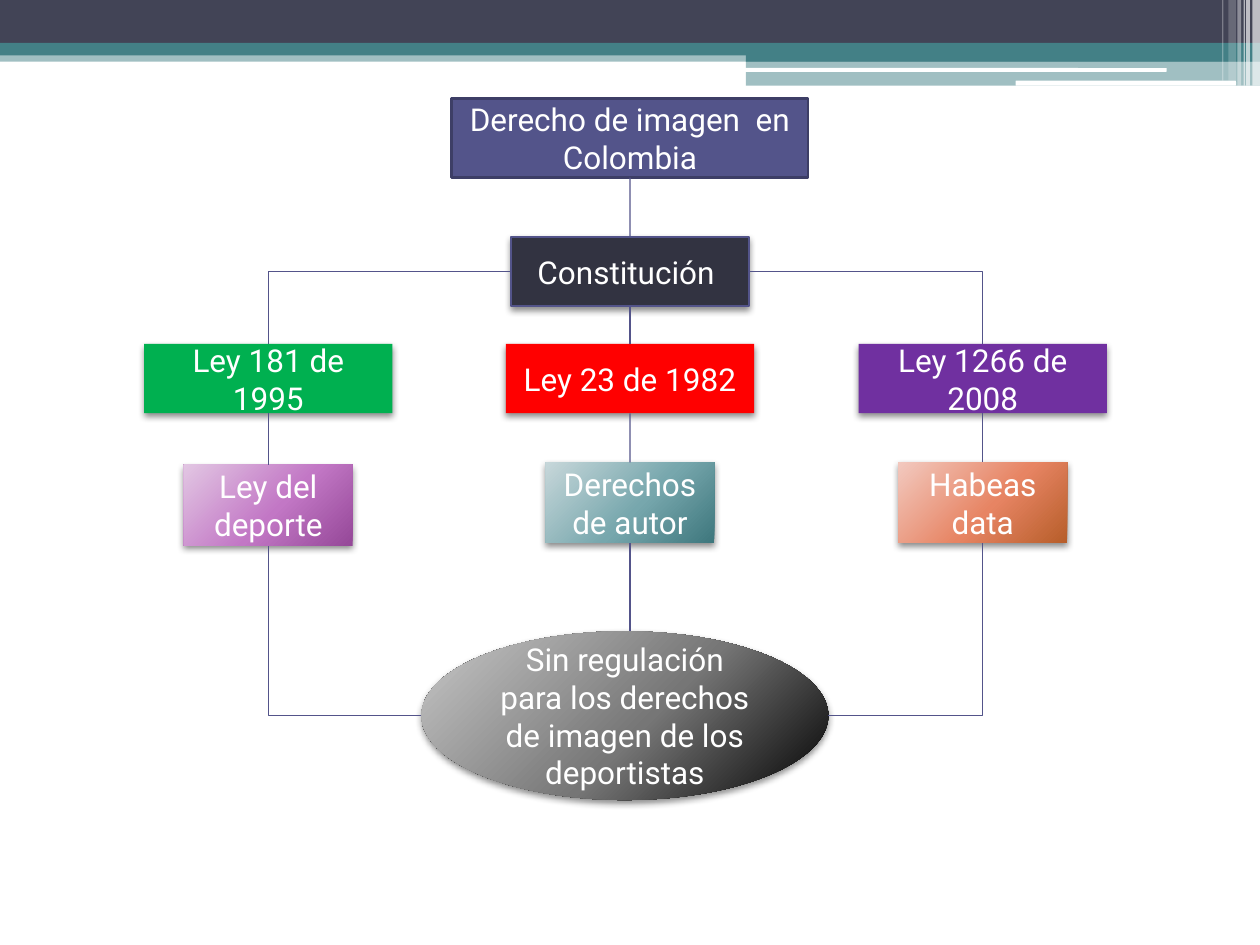
from lxml import etree
from pptx import Presentation
from pptx import util as u
from pptx.dml.color import RGBColor
from pptx.enum import shapes, text
from pptx.oxml import parse_xml
from pptx.oxml.ns import nsdecls, qn

NAVY = RGBColor(0x42, 0x44, 0x56)
TEAL = RGBColor(0x43, 0x80, 0x86)
WHITE = RGBColor(0xFF, 0xFF, 0xFF)
INDIGO = RGBColor(0x53, 0x54, 0x8A)
INDIGO_DARK = RGBColor(0x3D, 0x3E, 0x66)
SLATE = RGBColor(0x32, 0x33, 0x41)
GREEN = RGBColor(0x00, 0xB0, 0x50)
RED = RGBColor(0xFF, 0x00, 0x00)
PURPLE = RGBColor(0x70, 0x30, 0xA0)
ORCHID = (RGBColor(0xE2, 0xC6, 0xE3), RGBColor(0xC2, 0x77, 0xC5), RGBColor(0x95, 0x48, 0x98))
AQUA = (RGBColor(0xC7, 0xD7, 0xDA), RGBColor(0x77, 0xA7, 0xAD), RGBColor(0x3E, 0x77, 0x7D))
ORANGE = (RGBColor(0xF2, 0xC9, 0xBF), RGBColor(0xE7, 0x84, 0x63), RGBColor(0xB7, 0x5E, 0x2A))
GRAY = (RGBColor(0xC8, 0xC8, 0xC8), RGBColor(0x76, 0x76, 0x76), RGBColor(0x00, 0x00, 0x00))

RECT = shapes.MSO_SHAPE.RECTANGLE
ROUNDED = shapes.MSO_SHAPE.ROUNDED_RECTANGLE
ELLIPSE = shapes.MSO_SHAPE.OVAL
TOP, LEFT, BOTTOM, RIGHT = range(4)
FONT = {"name": "Roboto", "size": u.Pt(18)}
FRAME = {"word_wrap": True, "vertical_anchor": text.MSO_ANCHOR.MIDDLE}


def set_format(target, values):
    for name, value in values.items():
        setattr(target, name, value)


def add_block(s, kind, box, color, opacity=100):
    sp = s.shapes.add_shape(kind, *map(u.Inches, box))
    sp.shadow.inherit = False
    sp.line.fill.background()
    sp.fill.solid()
    sp.fill.fore_color.rgb = color
    if opacity < 100:
        clr = sp.fill._xPr.find(qn("a:solidFill"))[0]
        etree.SubElement(clr, qn("a:alpha"), val=str(opacity * 1000))
    return sp


def apply_gradient(sp, colors):
    stops = "".join(
        f'<a:gs pos="{pos * 1000}"><a:srgbClr val="{color}"/></a:gs>'
        for pos, color in zip((0, 55, 100), colors))
    grad = parse_xml(
        f'<a:gradFill {nsdecls("a")} rotWithShape="1"><a:gsLst>{stops}</a:gsLst>'
        '<a:path path="circle"><a:fillToRect l="-40000" t="-90000" r="140000" b="190000"/>'
        '</a:path></a:gradFill>')
    spPr = sp._element.spPr
    spPr.replace(spPr.find(qn("a:solidFill")), grad)


def add_shadow(sp):
    sp._element.spPr.find(qn("a:effectLst")).append(parse_xml(
        f'<a:outerShdw {nsdecls("a")} blurRad="{u.Pt(4)}" dist="{u.Pt(2)}" dir="5400000" '
        'rotWithShape="0"><a:srgbClr val="000000"><a:alpha val="45000"/></a:srgbClr>'
        '</a:outerShdw>'))


def add_node(s, label, box, fill, kind=RECT, line=None, shadow=True):
    gradient = isinstance(fill, tuple) and not isinstance(fill, RGBColor)
    sp = add_block(s, kind, box, fill[0] if gradient else fill)
    if gradient:
        apply_gradient(sp, fill)
    if line:
        sp.line.color.rgb, sp.line.width = line
    if shadow:
        add_shadow(sp)
    tf = sp.text_frame
    set_format(tf, FRAME)
    p = tf.paragraphs[0]
    p.alignment = text.PP_ALIGN.CENTER
    r = p.add_run()
    r.text = label
    set_format(r.font, FONT)
    r.font.color.rgb = WHITE
    return sp


def side_point(sp, side):
    x = {LEFT: sp.left, RIGHT: sp.left + sp.width}.get(side, sp.left + sp.width // 2)
    y = {TOP: sp.top, BOTTOM: sp.top + sp.height}.get(side, sp.top + sp.height // 2)
    return x, y


def add_link(s, start, start_side, end, end_side, bent=False):
    kind = shapes.MSO_CONNECTOR.ELBOW if bent else shapes.MSO_CONNECTOR.STRAIGHT
    begin, finish = side_point(start, start_side), side_point(end, end_side)
    if not bent:
        finish = begin[0], finish[1]
    cxn = s.shapes.add_connector(kind, *begin, *finish)
    cxn.line.color.rgb = INDIGO
    cxn.line.width = u.Pt(0.75)
    spPr = cxn._element.spPr
    etree.SubElement(spPr, qn("a:effectLst"))
    if bent:
        spPr.find(qn("a:prstGeom")).set("prst", "bentConnector2")
        return
    if start.auto_shape_type == RECT:
        cxn.begin_connect(start, start_side)
    if end.auto_shape_type == RECT:
        cxn.end_connect(end, end_side)


def add_header(s, left, top, width):
    half = left + 5.92
    right = left + width
    for kind, box, color, opacity in (
        (RECT, (left, top + 0.4, width, 0.09), TEAL, 50),
        (RECT, (left, top, width, 0.34), NAVY, 100),
        (RECT, (left, top + 0.34, width, 0.1), TEAL, 100),
        (RECT, (half, top + 0.39, right - half, 0.1), TEAL, 100),
        (RECT, (half, top + 0.48, right - half, 0.2), TEAL, 50),
        (ROUNDED, (half - 0.01, top + 0.54, 3.35, 0.03), WHITE, 100),
        (ROUNDED, (left + 8.06, top + 0.64, 1.75, 0.04), WHITE, 100),
    ):
        add_block(s, kind, box, color, opacity)
    for inset, stripe_width, height, opacity in (
        (0.06, 0.06, 0.68, 65), (0.11, 0.03, 0.68, 65), (0.13, 0.01, 0.68, 60),
        (0.18, 0.03, 0.68, 40), (0.25, 0.06, 0.64, 20), (0.3, 0.01, 0.64, 30),
    ):
        add_block(s, RECT, (right - inset, top, stripe_width, height), WHITE, opacity)


def add_diagram(s, left, top, width, height):
    def centered(cx, y, w, h):
        return left + cx - w / 2, top + y, w, h

    middle = width / 2
    constitution = add_node(s, "Constitución ", centered(middle, 1.1, 1.89, 0.55), SLATE,
                            line=(INDIGO, u.Pt(0.75)))
    columns = []
    for cx, law, law_color, topic, topic_colors, topic_y in (
        (0.99, "Ley 181 de 1995", GREEN, "Ley del deporte", ORCHID, 2.91),
        (middle, "Ley 23 de 1982", RED, "Derechos de autor", AQUA, 2.89),
        (6.66, "Ley 1266 de 2008", PURPLE, "Habeas data", ORANGE, 2.89),
    ):
        columns.append((add_node(s, law, centered(cx, 1.95, 1.97, 0.55), law_color),
                        add_node(s, topic, centered(cx, topic_y, 1.34, 0.64), topic_colors)))
    title = add_node(s, "Derecho de imagen  en Colombia", centered(middle, 0, 2.83, 0.63),
                     INDIGO, line=(INDIGO_DARK, u.Pt(1.5)), shadow=False)
    conclusion = add_node(s, "Sin regulación para los derechos de imagen de los deportistas",
                          centered(middle - 0.04, height - 1.34, 3.23, 1.34), GRAY, kind=ELLIPSE)

    add_link(s, title, BOTTOM, constitution, TOP)
    for law, topic in columns:
        add_link(s, law, BOTTOM, topic, TOP)
    sports, copyright_column, privacy = columns
    add_link(s, constitution, BOTTOM, copyright_column[0], TOP)
    add_link(s, copyright_column[1], BOTTOM, conclusion, TOP)
    for side, (law, topic) in ((LEFT, sports), (RIGHT, privacy)):
        add_link(s, constitution, side, law, TOP, bent=True)
        add_link(s, conclusion, side, topic, BOTTOM, bent=True)


def main():
    prs = Presentation()
    set_format(prs, {"slide_width": u.Inches(10), "slide_height": u.Inches(7.5)})
    s = prs.slides.add_slide(prs.slide_layouts[6])
    add_header(s, 0, 0, 10)
    add_diagram(s, 1.14, 0.78, 7.72, 5.57)
    prs.save("out.pptx")


if __name__ == "__main__":
    main()
